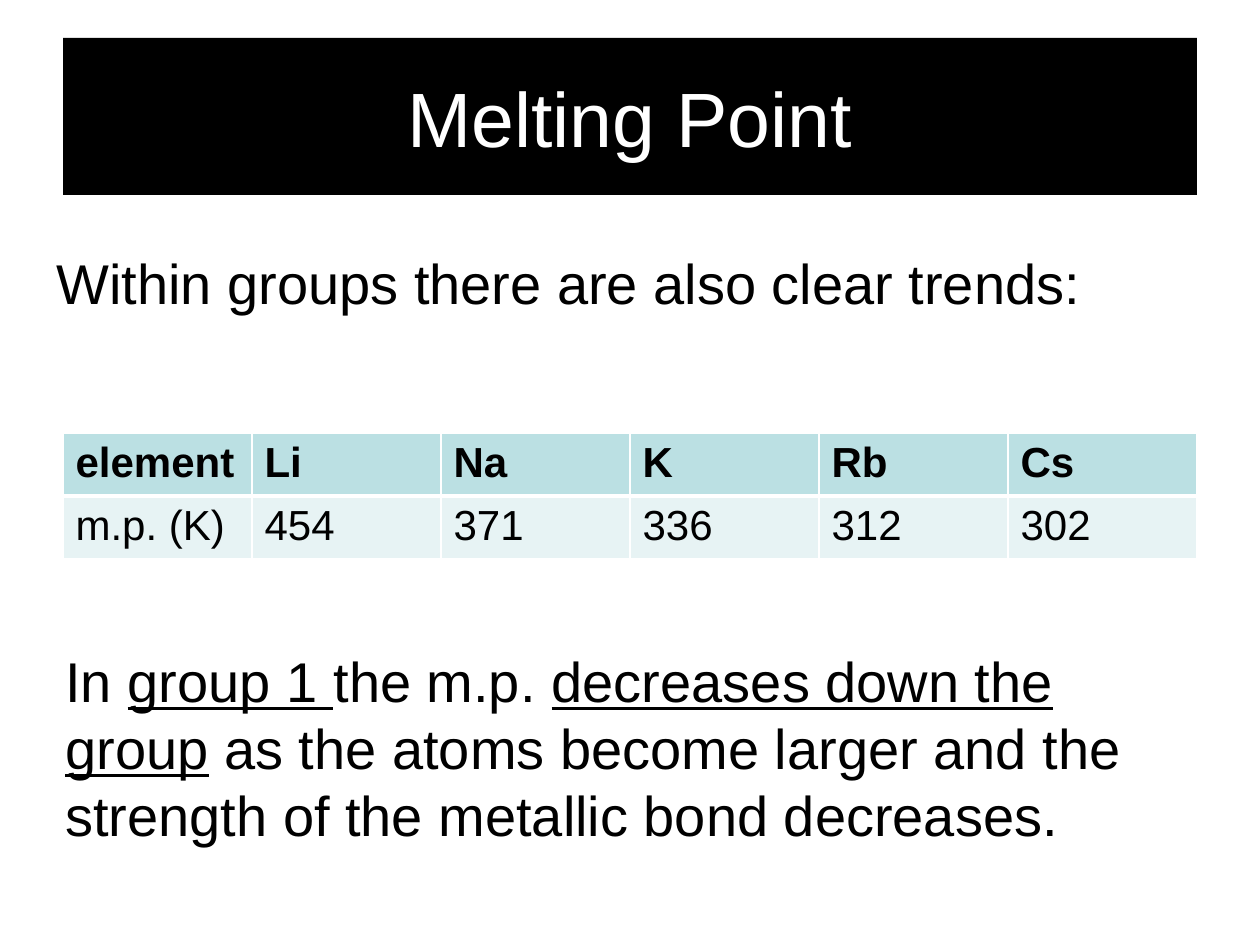
import pptx
import pptx.dml.color
import pptx.enum.text
import pptx.oxml
import pptx.oxml.ns
import pptx.util

RGBColor = pptx.dml.color.RGBColor
BLACK = RGBColor(0x00, 0x00, 0x00)
WHITE = RGBColor(0xFF, 0xFF, 0xFF)
HEADER_TEAL = RGBColor(0xBB, 0xE0, 0xE3)
PALE_TEAL = RGBColor(0xE7, 0xF3, 0xF4)
PX = pptx.util.Inches(1) / 126


def box(*lengths):
    """Turn lengths in px into EMU."""
    return [pptx.util.Emu(round(n * PX)) for n in lengths]


def style(r, size, color=BLACK, bold=False):
    r.font.name = "Arial"
    r.font.size = pptx.util.Pt(size)
    r.font.color.rgb = color
    r.font.bold = bold


prs = pptx.Presentation()
prs.slide_width, prs.slide_height = box(1260, 945)
s = prs.slides.add_slide(prs.slide_layouts[5])

title = s.shapes.title
title.left, title.top, title.width, title.height = box(63, 38, 1134, 157)
title.fill.solid()
title.fill.fore_color.rgb = BLACK
tf = title.text_frame
tf.text = "Melting Point"
tf.vertical_anchor = pptx.enum.text.MSO_ANCHOR.MIDDLE
p = tf.paragraphs[0]
p.alignment = pptx.enum.text.PP_ALIGN.CENTER
style(p.runs[0], 44, WHITE)

# Each text is a list of (words, underlined) runs.
texts = [
    ((44, 242, 1155, 105), [("Within groups there are also clear trends:", False)]),
    ((53, 640, 1155, 231), [
        ("In ", False),
        ("group 1 ", True),
        ("the m.p. ", False),
        ("decreases down the group", True),
        (" as the atoms become larger and the strength of the metallic bond decreases.", False),
    ]),
]
for place, runs in texts:
    tf = s.shapes.add_textbox(*box(*place)).text_frame
    tf.word_wrap = True
    p = tf.paragraphs[0]
    p.space_before = pptx.util.Pt(6.4)
    for words, underlined in runs:
        r = p.add_run()
        r.text = words
        style(r, 32)
        r.font.underline = underlined

rows = [
    ("element", "Li", "Na", "K", "Rb", "Cs"),
    ("m.p. (K)", "454", "371", "336", "312", "302"),
]
frame = s.shapes.add_table(len(rows), len(rows[0]), *box(63, 433, 1134, 119))
for i, row in enumerate(rows):
    header = i == 0
    for j, value in enumerate(row):
        cell = frame.table.cell(i, j)
        cell.text = value
        style(cell.text_frame.paragraphs[0].runs[0], 24, bold=header)
        tcPr = cell._tc.get_or_add_tcPr()
        for side in "LRTB":
            # A thick rule parts the header from the values.
            thick = (header and side == "B") or (not header and side == "T")
            width = pptx.util.Pt(3 if thick else 1)
            tcPr.append(pptx.oxml.parse_xml(
                f'<a:ln{side} {pptx.oxml.ns.nsdecls("a")} w="{width}">'
                f'<a:solidFill><a:srgbClr val="{WHITE}"/></a:solidFill></a:ln{side}>'
            ))
        cell.fill.solid()
        cell.fill.fore_color.rgb = HEADER_TEAL if header else PALE_TEAL

prs.save("out.pptx")
